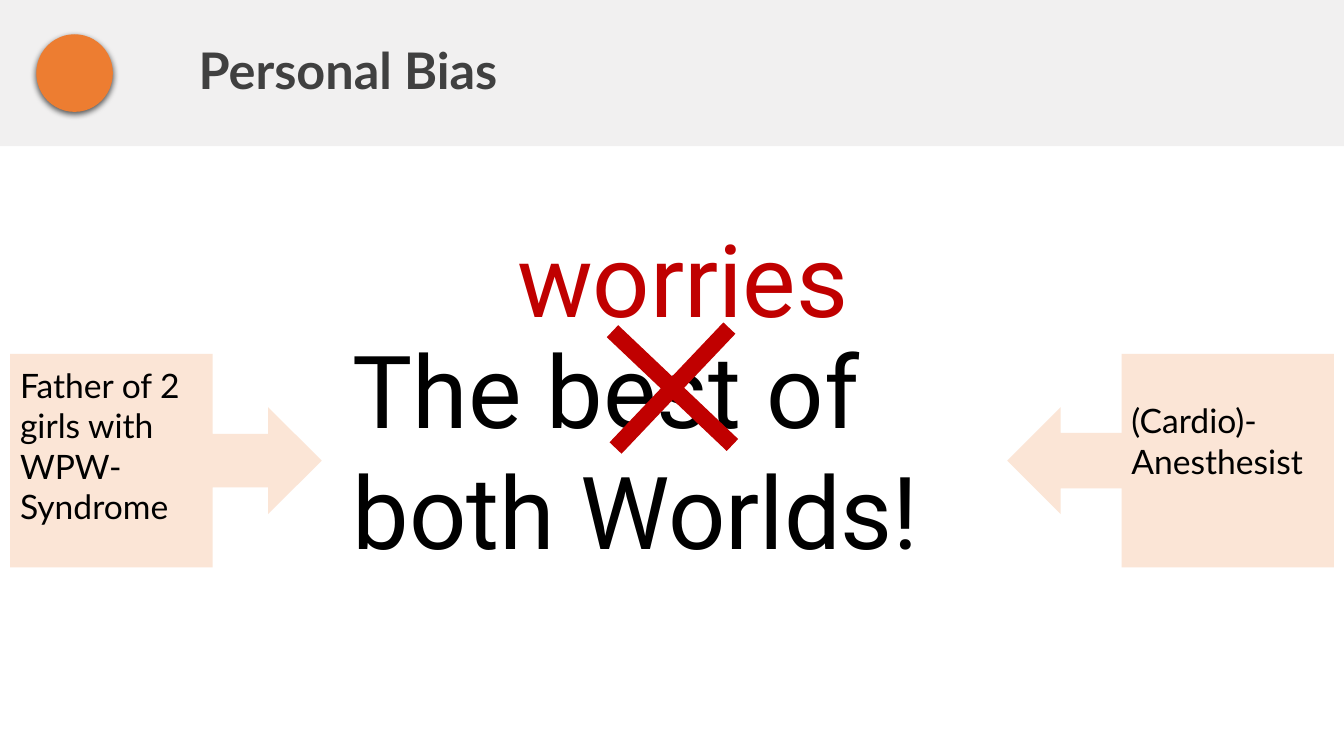
import pptx
import pptx.util
import pptx.dml.color
import pptx.enum.shapes
import pptx.enum.text
import pptx.oxml
import pptx.oxml.ns

Inches, Pt = pptx.util.Inches, pptx.util.Pt
KIND = pptx.enum.shapes.MSO_SHAPE
ANCHOR = pptx.enum.text.MSO_ANCHOR
ALIGN = pptx.enum.text.PP_ALIGN

# Content
COLORS = {"band": "D0CECE", "dot": "ED7D31", "peach": "FBE5D6",
          "red": "C00000", "black": "000000", "title": "404040"}
TITLE = "Personal Bias"
CLAIM = "The best of both Worlds!"
FIX = "worries"
# text, kind, left, width, top inset, adjustments
ROLES = [
    ("Father of 2 girls with WPW-Syndrome", KIND.RIGHT_ARROW_CALLOUT,
     0.1, 3.09, 0.11, (0.25, 0.25, 0.25, 0.65)),
    ("(Cardio)-Anesthesist", KIND.LEFT_ARROW_CALLOUT,
     9.99, 3.24, 0.46, (0.26, 0.25, 0.25, 0.65)),
]
ROLE_TOP, ROLE_H = 3.51, 2.12
BAND_H = 1.45


def rgb(name):
    return pptx.dml.color.RGBColor.from_string(COLORS[name])


def add_part(home, kind, box, color):
    part = home.add_shape(kind, *map(Inches, box))
    part.shadow.inherit = False
    part.fill.solid()
    part.fill.fore_color.rgb = rgb(color)
    part.line.fill.background()
    return part


def write(frame, text, size, font, color, bold=False):
    para = frame.paragraphs[0]
    para.alignment = ALIGN.LEFT
    run = para.add_run()
    run.text = text
    run.font.size = Pt(size)
    run.font.name = font
    run.font.bold = bold
    run.font.color.rgb = rgb(color)
    return para


def add_words(home, box, text, color, wrap):
    frame = home.add_textbox(*map(Inches, box)).text_frame
    frame.word_wrap = wrap
    frame.auto_size = pptx.enum.text.MSO_AUTO_SIZE.SHAPE_TO_FIT_TEXT
    write(frame, text, 72, "Roboto", color)


deck = pptx.Presentation()
deck.slide_width, deck.slide_height = Inches(13.33), Inches(7.5)
slide = deck.slides.add_slide(deck.slide_layouts[5])
shapes = slide.shapes
qn = pptx.oxml.ns.qn
NS = pptx.oxml.ns.nsdecls("a")

# Header band, see-through grey
band = add_part(shapes, KIND.RECTANGLE, (0, 0, 13.33, BAND_H), "band")
tint = band.element.spPr.find(".//" + qn("a:srgbClr"))
tint.append(pptx.oxml.parse_xml(f'<a:alpha {NS} val="29000"/>'))

# Header dot with a soft shadow
dot = add_part(shapes, KIND.OVAL, (0.36, 0.34, 0.76, 0.77), "dot")
dot.element.spPr.find(qn("a:effectLst")).append(pptx.oxml.parse_xml(
    f'<a:outerShdw {NS} blurRad="{Pt(4.5)}" dist="{Pt(1.5)}" dir="5400000" '
    'rotWithShape="0"><a:srgbClr val="000000"><a:alpha val="63000"/>'
    '</a:srgbClr></a:outerShdw>'))

# Claim
add_words(shapes, (3.4, 3.2, 6.39, 2.52), CLAIM, "black", True)

# Title, raised above the band
title = shapes.title
title.left, title.top = Inches(1.87), 0
title.width, title.height = Inches(11.66), Inches(BAND_H)
title.text_frame.vertical_anchor = ANCHOR.MIDDLE
line = write(title.text_frame, TITLE, 36, "Lato", "title", True)
line.line_spacing = 0.9
title.element.getparent().append(title.element)

# Roles pointing at the claim
for text, kind, left, width, inset, adjust in ROLES:
    role = add_part(shapes, kind, (left, ROLE_TOP, width, ROLE_H), "peach")
    for i, value in enumerate(adjust):
        role.adjustments[i] = value
    frame = role.text_frame
    frame.word_wrap = True
    frame.vertical_anchor = ANCHOR.TOP
    frame.margin_top = Inches(inset)
    write(frame, text, 24, "Lato", "black")

# Cross and the word that takes over
group = shapes.add_group_shape().shapes
cross = add_part(group, KIND.CROSS, (5.85, 3.03, 1.64, 1.64), "red")
cross.adjustments[0] = 0.45
cross.rotation = 313.5
add_words(group, (5.03, 2.1, 3.51, 1.31), FIX, "red", False)

deck.save("out.pptx")
